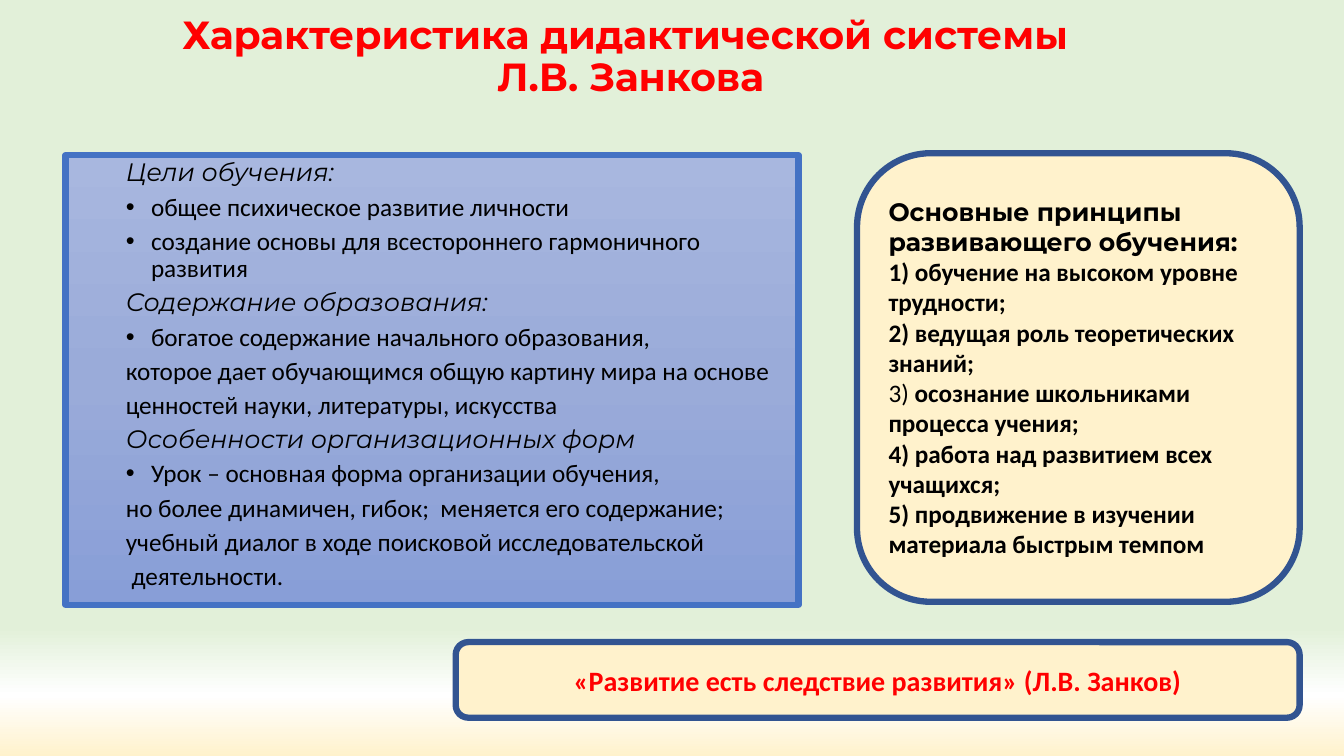
from lxml.etree import SubElement
from pptx import Presentation
from pptx.dml.color import RGBColor
from pptx.enum.shapes import MSO_SHAPE
from pptx.enum.text import MSO_ANCHOR, MSO_AUTO_SIZE, PP_ALIGN
from pptx.oxml.ns import qn
from pptx.util import Inches, Pt


def add_text(paragraph, text, size, font="Calibri", color="000000", bold=False, italic=False):
    run = paragraph.add_run()
    run.text = text
    run.font.name = font
    run.font.size = Pt(size)
    run.font.bold = bold
    run.font.italic = italic
    run.font.color.rgb = RGBColor.from_string(color)


def set_gradient(fill, owner, stops):
    """Fill from top to bottom with (percent, colour) stops; owner is the XML holding the fill."""
    fill.gradient()
    fill.gradient_angle = 270
    stop_list = next(owner.iter(qn("a:gsLst")))
    for old_stop in list(stop_list):
        stop_list.remove(old_stop)
    for percent, color in stops:
        stop = SubElement(stop_list, qn("a:gs"), pos=str(percent * 1000))
        SubElement(stop, qn("a:srgbClr"), val=color)


presentation = Presentation()
presentation.slide_width = Inches(13.33)
presentation.slide_height = Inches(7.5)
slide = presentation.slides.add_slide(presentation.slide_layouts[5])
set_gradient(slide.background.fill, slide.element,
             [(83, "E2F0D9"), (92, "FFFFFF"), (100, "FFF2CC"), (100, "C7D5ED")])

# Title
title = slide.shapes.title
title.left, title.top = Inches(0.46), Inches(0)
title.width, title.height = Inches(11.59), Inches(1.14)
title.text_frame.auto_size = MSO_AUTO_SIZE.NONE
title.text_frame.vertical_anchor = MSO_ANCHOR.MIDDLE
heading = title.text_frame.paragraphs[0]
heading.alignment = PP_ALIGN.CENTER
heading.line_spacing = 0.9
add_text(heading, "Характеристика дидактической системы ", 28, "Montserrat", "FF0000", bold=True)
heading.add_line_break()
add_text(heading, "Л.В. Занкова", 28, "Montserrat", "FF0000", bold=True)

# Panels
panels = []
for preset, left, top, width, height, outline, anchor in [
    (MSO_SHAPE.RECTANGLE, 0.65, 1.54, 7.27, 4.46, "4472C4", MSO_ANCHOR.TOP),
    (MSO_SHAPE.ROUNDED_RECTANGLE, 8.5, 1.52, 4.39, 4.45, "325491", MSO_ANCHOR.MIDDLE),
    (MSO_SHAPE.ROUNDED_RECTANGLE, 4.52, 6.37, 8.37, 0.75, "325491", MSO_ANCHOR.MIDDLE),
]:
    panel = slide.shapes.add_shape(preset, Inches(left), Inches(top), Inches(width), Inches(height))
    panel.shadow.inherit = False
    panel.fill.solid()
    panel.fill.fore_color.rgb = RGBColor.from_string("FFF2CC")
    panel.line.color.rgb = RGBColor.from_string(outline)
    panel.line.width = Pt(4.5)
    panel.text_frame.word_wrap = True
    panel.text_frame.vertical_anchor = anchor
    panels.append(panel)
system, principles, quote = panels

# Goals, content and forms of teaching
set_gradient(system.fill, system.element, [(0, "A8B7DF"), (50, "9AABD9"), (100, "889ED7")])
system_lines = [
    ("heading", "Цели обучения:"),
    ("bullet", "общее психическое развитие личности"),
    ("bullet", "создание основы для всестороннего гармоничного развития"),
    ("heading", "Содержание образования:"),
    ("bullet", "богатое содержание начального образования,"),
    ("plain", "которое дает обучающимся общую картину мира на основе"),
    ("plain", "ценностей науки, литературы, искусства"),
    ("heading", "Особенности организационных форм"),
    ("bullet", "Урок – основная форма организации обучения,"),
    ("plain", "но более динамичен, гибок;  меняется его содержание;"),
    ("plain", "учебный диалог в ходе поисковой исследовательской"),
    ("plain", " деятельности."),
]
for index, (role, text) in enumerate(system_lines):
    frame = system.text_frame
    line = frame.paragraphs[0] if index == 0 else frame.add_paragraph()
    line.alignment = PP_ALIGN.LEFT
    line.line_spacing = 0.9
    line.space_before = Pt(5)
    is_bullet, is_heading = role == "bullet", role == "heading"
    properties = line._p.get_or_add_pPr()
    properties.set("marL", str(Inches(0.75 if is_bullet else 0.5)))
    properties.set("indent", str(Inches(-0.25 if is_bullet else 0)))
    if is_bullet:
        SubElement(properties, qn("a:buFont"), typeface="Arial")
        SubElement(properties, qn("a:buChar"), char="•")
    add_text(line, text, 18, "Montserrat" if is_heading else "Calibri", italic=is_heading)

# Principles
principles_heading = principles.text_frame.paragraphs[0]
principles_heading.alignment = PP_ALIGN.LEFT
add_text(principles_heading, "Основные принципы развивающего обучения:", 18, "Montserrat", bold=True)
for number, text in enumerate([
    "обучение на высоком уровне трудности;",
    "ведущая роль теоретических знаний;",
    "осознание школьниками процесса учения;",
    "работа над развитием всех учащихся;",
    "продвижение в изучении материала быстрым темпом",
], start=1):
    principle = principles.text_frame.add_paragraph()
    principle.alignment = PP_ALIGN.LEFT
    add_text(principle, f"{number}) ", 18, bold=number != 3)
    add_text(principle, text, 18, bold=True)

# Quotation
quotation = quote.text_frame.paragraphs[0]
quotation.alignment = PP_ALIGN.CENTER
add_text(quotation, "«Развитие есть следствие развития» (Л.В. Занков)", 20, color="FF0000", bold=True)

presentation.save("out.pptx")
